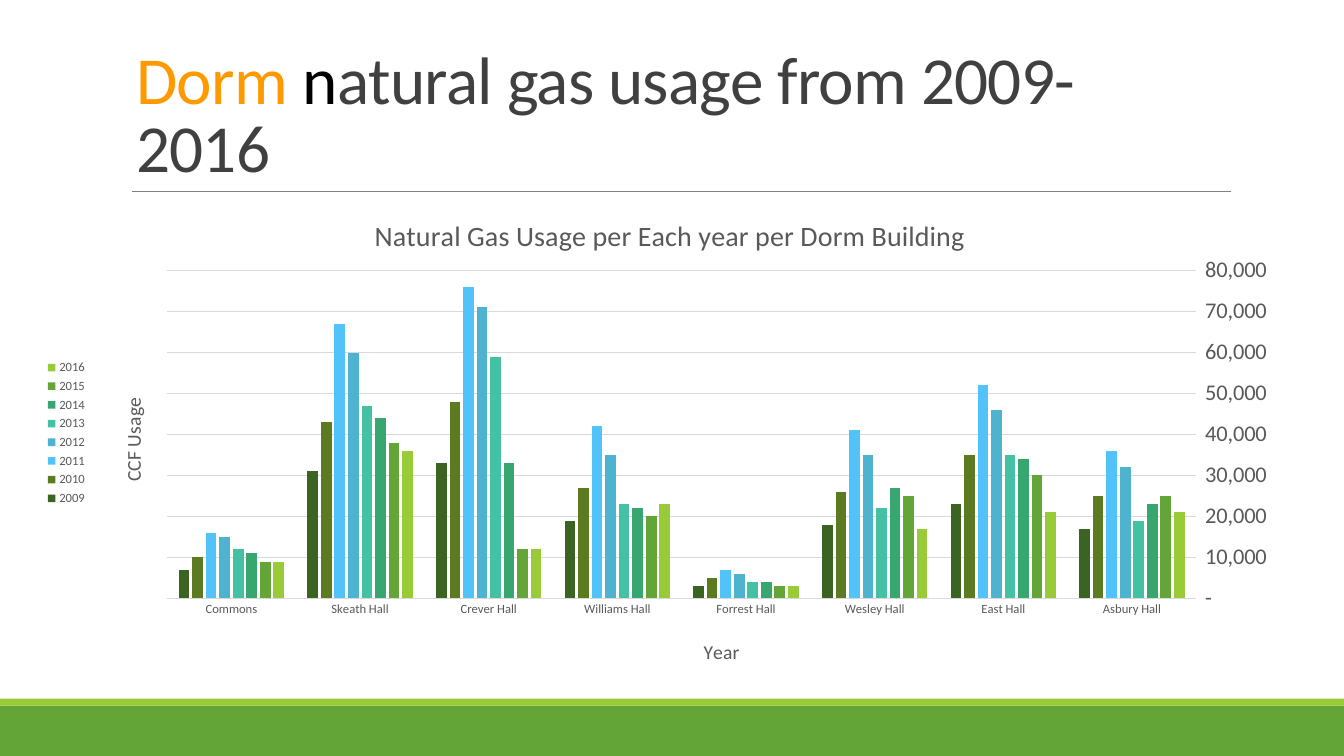
from dataclasses import dataclass
from typing import Optional

from lxml.etree import SubElement
from pptx import Presentation
from pptx.chart.axis import CategoryAxis, ValueAxis
from pptx.chart.chart import Chart
from pptx.chart.data import CategoryChartData
from pptx.dml.color import RGBColor
from pptx.enum.chart import XL_CHART_TYPE, XL_LEGEND_POSITION, XL_TICK_MARK
from pptx.enum.shapes import MSO_CONNECTOR, MSO_SHAPE
from pptx.enum.text import MSO_ANCHOR, MSO_AUTO_SIZE, PP_ALIGN
from pptx.oxml import parse_xml
from pptx.oxml.ns import nsdecls, qn
from pptx.slide import Slide
from pptx.text.text import Font, TextFrame
from pptx.util import Inches, Pt

SLIDE_WIDTH = Inches(13.33)
SLIDE_HEIGHT = Inches(7.5)
FONT_NAME = "Calibri"
COLORS = {
    "band": "63A537",
    "stripe": "99CB38",
    "rule": "808080",
    "accent": "FF9900",
    "black": "000000",
    "title": "404040",
    "label": "595959",
    "grid": "D9D9D9",
}


@dataclass(frozen=True)
class Box:
    """Position and size as percentages of the surrounding area."""

    left: float
    top: float
    width: float
    height: float

    def on_slide(self) -> tuple[int, int, int, int]:
        return (
            round(SLIDE_WIDTH * self.left / 100),
            round(SLIDE_HEIGHT * self.top / 100),
            round(SLIDE_WIDTH * self.width / 100),
            round(SLIDE_HEIGHT * self.height / 100),
        )


@dataclass(frozen=True)
class Band:
    box: Box
    color: str


@dataclass(frozen=True)
class TitleRun:
    text: str
    color: str


@dataclass(frozen=True)
class YearUsage:
    year: str
    color: str
    thousands: tuple[int, ...]


BANDS = (
    Band(Box(0, 93.33, 100, 6.67), "band"),
    Band(Box(0, 92.4, 100, 0.93), "stripe"),
)
RULE_BOX = Box(9.83, 25.33, 81.77, 0)
TITLE_BOX = Box(9.38, 3.73, 81.25, 21.6)
CHART_BOX = Box(2.63, 24.67, 93.85, 65.2)
PLOT_BOX = Box(10.45, 17.05, 81.6, 66.54)
TITLE_RUNS = (
    TitleRun("Dorm ", "accent"),
    TitleRun("n", "black"),
    TitleRun("atural gas usage from 2009-2016", "title"),
)
HALLS = (
    "Asbury Hall", "East Hall", "Wesley Hall", "Forrest Hall",
    "Williams Hall", "Crever Hall", "Skeath Hall", "Commons",
)
USAGES = (
    YearUsage("2016", "99CB38", (21, 21, 17, 3, 23, 12, 36, 9)),
    YearUsage("2015", "63A537", (25, 30, 25, 3, 20, 12, 38, 9)),
    YearUsage("2014", "37A76F", (23, 34, 27, 4, 22, 33, 44, 11)),
    YearUsage("2013", "44C1A3", (19, 35, 22, 4, 23, 59, 47, 12)),
    YearUsage("2012", "4EB3CF", (32, 46, 35, 6, 35, 71, 60, 15)),
    YearUsage("2011", "51C3F9", (36, 52, 41, 7, 42, 76, 67, 16)),
    YearUsage("2010", "5C7B20", (25, 35, 26, 5, 27, 48, 43, 10)),
    YearUsage("2009", "3B6321", (17, 23, 18, 3, 19, 33, 31, 7)),
)


def rgb(name: str) -> RGBColor:
    return RGBColor.from_string(COLORS[name])


def style_font(font: Font, size: float, color: str) -> None:
    font.name = FONT_NAME
    font.size = Pt(size)
    font.bold = False
    font.color.rgb = rgb(color)


def add_band(slide: Slide, band: Band) -> None:
    shape = slide.shapes.add_shape(MSO_SHAPE.RECTANGLE, *band.box.on_slide())
    shape.shadow.inherit = False
    shape.fill.solid()
    shape.fill.fore_color.rgb = rgb(band.color)
    shape.line.fill.background()


def add_rule(slide: Slide) -> None:
    left, top, width, height = RULE_BOX.on_slide()
    connector = slide.shapes.add_connector(
        MSO_CONNECTOR.STRAIGHT, left, top, left + width, top + height
    )
    connector.line.color.rgb = rgb("rule")
    connector.line.width = Pt(0.5)
    SubElement(connector._element.spPr, qn("a:effectLst"))


def fill_title(slide: Slide) -> None:
    title = slide.shapes.title
    title.left, title.top, title.width, title.height = TITLE_BOX.on_slide()
    frame = title.text_frame
    frame.word_wrap = True
    frame.auto_size = MSO_AUTO_SIZE.NONE
    frame.vertical_anchor = MSO_ANCHOR.BOTTOM
    paragraph = frame.paragraphs[0]
    paragraph.alignment = PP_ALIGN.LEFT
    paragraph.line_spacing = 0.85
    for title_run in TITLE_RUNS:
        run = paragraph.add_run()
        run.text = title_run.text
        style_font(run.font, 48, title_run.color)
        run._r.get_or_add_rPr().set("spc", "-50")


def place_part(parent, index: int, left: float, top: float,
               size: Optional[tuple[float, float]] = None) -> None:
    settings = [("xMode", "edge"), ("yMode", "edge"),
                ("x", left / 100), ("y", top / 100)]
    if size:
        settings.insert(0, ("layoutTarget", "inner"))
        settings += [("w", size[0] / 100), ("h", size[1] / 100)]
    existing = parent.find(qn("c:layout"))
    if existing is not None:
        parent.remove(existing)
    values = "".join(f'<c:{name} val="{value}"/>' for name, value in settings)
    parent.insert(index, parse_xml(
        f'<c:layout {nsdecls("c")}><c:manualLayout>{values}</c:manualLayout></c:layout>'
    ))


def write_chart_title(frame: TextFrame, text: str, size: float) -> None:
    run = frame.paragraphs[0].add_run()
    run.text = text
    style_font(run.font, size, "label")


def style_axis(axis: CategoryAxis | ValueAxis, text: str, size: float,
               left: float, top: float) -> None:
    axis.major_tick_mark = XL_TICK_MARK.NONE
    axis.minor_tick_mark = XL_TICK_MARK.NONE
    style_font(axis.tick_labels.font, size, "label")
    write_chart_title(axis.axis_title.text_frame, text, 14)
    place_part(axis.axis_title._element, 1, left, top)


def style_axes(chart: Chart) -> None:
    category_axis = chart.category_axis
    style_axis(category_axis, "Year", 9, 52.7, 90.9)
    category_axis.reverse_order = True
    category_axis.format.line.color.rgb = rgb("grid")
    category_axis.format.line.width = Pt(0.75)
    value_axis = chart.value_axis
    style_axis(value_axis, "CCF Usage", 16, 6.4, 42.1)
    value_axis.axis_title.text_frame._txBody.bodyPr.set("rot", "-5400000")
    value_axis.minimum_scale = 0
    value_axis.maximum_scale = 80000
    value_axis.major_unit = 10000
    value_axis.format.line.fill.background()
    value_axis.major_gridlines.format.line.color.rgb = rgb("grid")
    value_axis.major_gridlines.format.line.width = Pt(0.75)
    value_axis.tick_labels.number_format = '_(* #,##0_);_(* \\(#,##0\\);_(* "-"??_);_(@_)'
    value_axis.tick_labels.number_format_is_linked = False


def add_usage_chart(slide: Slide) -> None:
    data = CategoryChartData()
    data.categories = HALLS
    for usage in USAGES:
        data.add_series(usage.year, [value * 1000 for value in usage.thousands])
    chart = slide.shapes.add_chart(
        XL_CHART_TYPE.COLUMN_CLUSTERED, *CHART_BOX.on_slide(), data
    ).chart
    style_font(chart.font, 10, "black")
    chart.has_title = True
    write_chart_title(
        chart.chart_title.text_frame, "Natural Gas Usage per Each year per Dorm Building", 20
    )
    place_part(chart.chart_title._element, 1, 26.5, 4.9)
    chart.has_legend = True
    chart.legend.position = XL_LEGEND_POSITION.LEFT
    chart.legend.include_in_layout = False
    style_font(chart.legend.font, 9, "label")
    style_axes(chart)
    plot = chart.plots[0]
    plot.gap_width = 219
    plot.overlap = -27
    plot.vary_by_categories = False
    for series, usage in zip(plot.series, USAGES):
        series.format.fill.solid()
        series.format.fill.fore_color.rgb = RGBColor.from_string(usage.color)
    place_part(chart._chartSpace.chart.plotArea, 0, PLOT_BOX.left, PLOT_BOX.top,
               (PLOT_BOX.width, PLOT_BOX.height))


def main() -> None:
    presentation = Presentation()
    presentation.slide_width = SLIDE_WIDTH
    presentation.slide_height = SLIDE_HEIGHT
    slide = presentation.slides.add_slide(presentation.slide_layouts[5])
    for band in BANDS:
        add_band(slide, band)
    add_rule(slide)
    fill_title(slide)
    add_usage_chart(slide)
    presentation.save("out.pptx")


if __name__ == "__main__":
    main()
